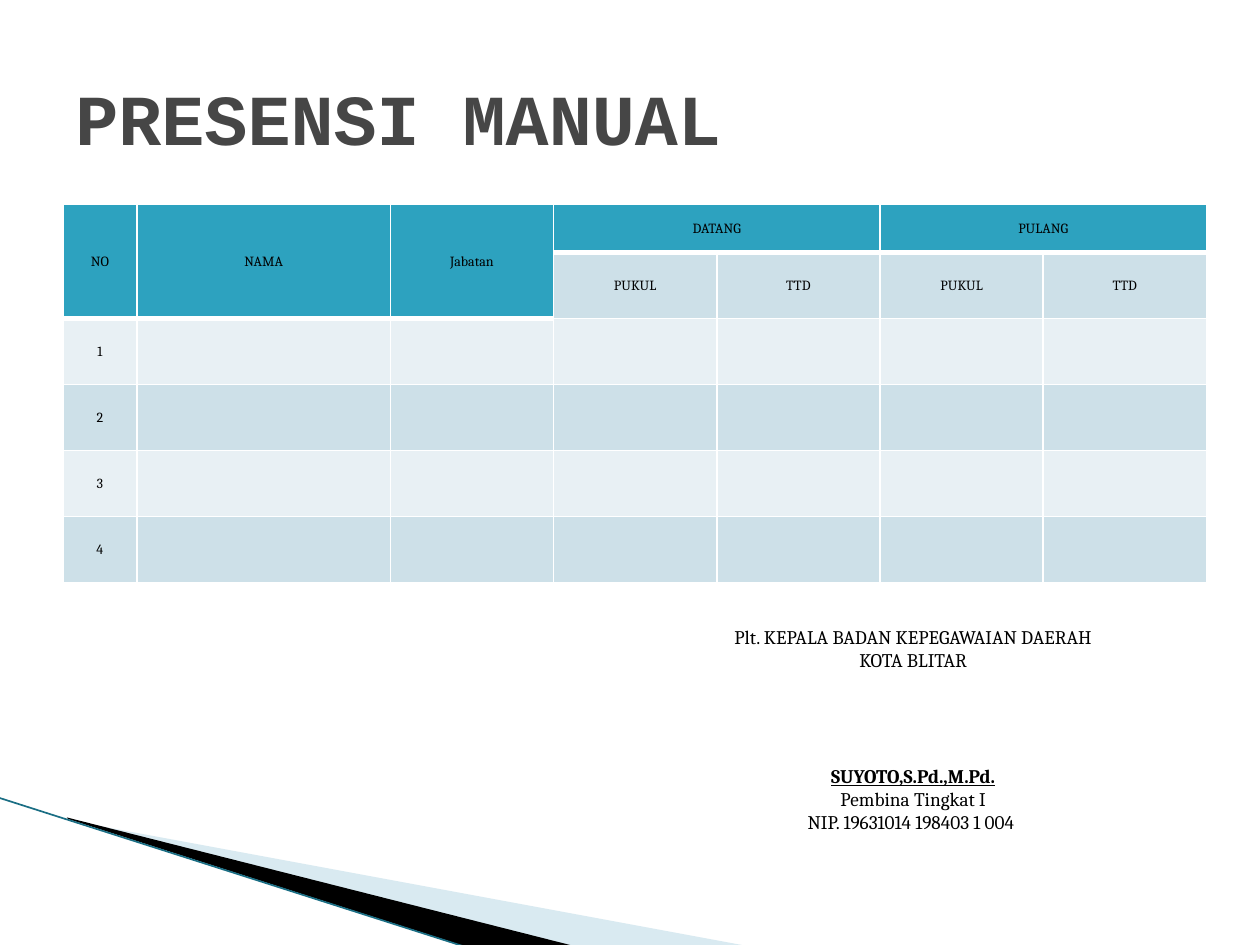
import pptx
import pptx.dml.color
import pptx.enum.shapes
import pptx.enum.text
import pptx.oxml
import pptx.oxml.ns
import pptx.util
from pptx.util import Cm

COLORS = {
    "black": "000000", "title": "464646", "header": "2DA2BF", "band_dark": "CDE0E8",
    "band_light": "E8F0F4", "border": "FFFFFF", "wedge": "A0CBDC", "edge": "1A6E84",
}
ALIGN = pptx.enum.text.PP_ALIGN
MIDDLE = pptx.enum.text.MSO_ANCHOR.MIDDLE


def rgb(name):
    return pptx.dml.color.RGBColor.from_string(COLORS[name])


def write(paragraph, text, font="Cambria", size=11, color="black", bold=False,
          underline=False, align=ALIGN.CENTER, before=0):
    paragraph.alignment = align
    if before:
        paragraph.space_before = pptx.util.Pt(before)
    run = paragraph.add_run()
    run.text = text
    run.font.name = font
    run.font.size = pptx.util.Pt(size)
    run.font.bold = bold
    run.font.underline = underline
    run.font.color.rgb = rgb(color)


presentation = pptx.Presentation()
presentation.slide_width, presentation.slide_height = Cm(25.4), Cm(19.05)
slide = presentation.slides.add_slide(presentation.slide_layouts[6])

# Corner wedges: colour, opacity, frame, corners (which reach beyond the frame)
wedges = [
    ("wedge", 40, (1.98, 13.89, 10.57, 4.01),
     [(1.4, 16.54), (15.11, 19.08), (11.58, 19.08), (1.4, 16.51)]),
    ("black", 100, (-0.15, 16.08, 10.57, 2.34),
     [(1.35, 16.48), (11.61, 19.08), (9.45, 19.1), (1.37, 16.51)]),
]
for color, opacity, bounds, points in wedges:
    corners = [(Cm(x), Cm(y)) for x, y in points]
    builder = slide.shapes.build_freeform(*corners[0], scale=1.0)
    builder.add_line_segments(corners[1:], close=True)
    shape = builder.convert_to_shape()
    shape.shadow.inherit = False
    shape.fill.solid()
    shape.fill.fore_color.rgb = rgb(color)
    shape.line.fill.background()
    if opacity < 100:
        fill_color = shape.fill._xPr.find(".//" + pptx.oxml.ns.qn("a:srgbClr"))
        fill_color.append(pptx.oxml.parse_xml(
            f'<a:alpha {pptx.oxml.ns.nsdecls("a")} val="{opacity * 1000}"/>'))
    # Measure the outline from the frame's corner
    left, top, width, height = [Cm(length) for length in bounds]
    shape.left, shape.top, shape.width, shape.height = left, top, width, height
    outline = shape._element.spPr.find(".//" + pptx.oxml.ns.qn("a:path"))
    outline.set("w", str(width))
    outline.set("h", str(height))
    for point, (x, y) in zip(outline.iter(pptx.oxml.ns.qn("a:pt")), corners):
        point.set("x", str(x - left))
        point.set("y", str(y - top))

# Corner edge line
edge = slide.shapes.add_connector(
    pptx.enum.shapes.MSO_CONNECTOR.STRAIGHT, Cm(-0.03), Cm(16.08), Cm(9.42), Cm(19.1))
edge.line.color.rgb = rgb("edge")
edge.line.width = pptx.util.Pt(0.95)
edge._element.spPr.append(
    pptx.oxml.parse_xml(f'<a:effectLst {pptx.oxml.ns.nsdecls("a")}/>'))

# Attendance table
rows = [
    ["NO", "NAMA", "Jabatan", "DATANG", "", "PULANG", ""],
    ["", "", "", "PUKUL", "TTD", "PUKUL", "TTD"],
] + [[str(number)] + [""] * 6 for number in range(1, 5)]
column_widths = [1.49, 5.11] + [3.29] * 5
row_heights = [0.98] + [1.33] * 5
frame = slide.shapes.add_table(len(rows), len(column_widths), Cm(1.27), Cm(4.11),
                               Cm(sum(column_widths)), Cm(sum(row_heights)))
table = frame.table
for column, width in zip(table.columns, column_widths):
    column.width = Cm(width)
for row, height in zip(table.rows, row_heights):
    row.height = Cm(height)
for column in range(3):
    table.cell(0, column).merge(table.cell(1, column))
for column in (3, 5):
    table.cell(0, column).merge(table.cell(0, column + 1))

for row, texts in enumerate(rows):
    for column, text in enumerate(texts):
        cell = table.cell(row, column)
        header_end = 1 if column < 3 else 0
        widths = {"L": 1, "R": 1,
                  "T": 3 if row == header_end + 1 else 1,
                  "B": 3 if row <= header_end else 1}
        for side in "LRTB":
            cell._tc.get_or_add_tcPr().append(pptx.oxml.parse_xml(
                f'<a:ln{side} {pptx.oxml.ns.nsdecls("a")} w="{widths[side] * 12700}">'
                f'<a:solidFill><a:srgbClr val="{COLORS["border"]}"/></a:solidFill>'
                f'</a:ln{side}>'))
        cell.fill.solid()
        band = "band_dark" if row % 2 else "band_light"
        cell.fill.fore_color.rgb = rgb("header" if row <= header_end else band)
        cell.vertical_anchor = MIDDLE
        cell.margin_left = cell.margin_right = cell.margin_top = Cm(0.03)
        cell.margin_bottom = 0
        if text:
            write(cell.text_frame.paragraphs[0], text, size=8)

# Title
title = slide.shapes.add_textbox(Cm(1.27), Cm(0.76), Cm(22.86), Cm(3.18)).text_frame
title.word_wrap = True
title.vertical_anchor = MIDDLE
write(title.paragraphs[0], "PRESENSI MANUAL", font="Courier New", size=41,
      color="title", bold=True, align=ALIGN.LEFT)

# Signature block, with room to sign above the name
signature = slide.shapes.add_textbox(Cm(12.06), Cm(12.48), Cm(12.7), Cm(4.5)).text_frame
signature.word_wrap = True
lines = [
    ("Plt. KEPALA BADAN KEPEGAWAIAN DAERAH", {}),
    ("KOTA BLITAR", {}),
    ("SUYOTO,S.Pd.,M.Pd.", {"bold": True, "underline": True, "before": 53}),
    ("Pembina Tingkat I", {}),
    ("NIP. 19631014 198403 1 004 ", {}),
]
for index, (text, style) in enumerate(lines):
    paragraph = signature.add_paragraph() if index else signature.paragraphs[0]
    write(paragraph, text, **style)

presentation.save("out.pptx")
